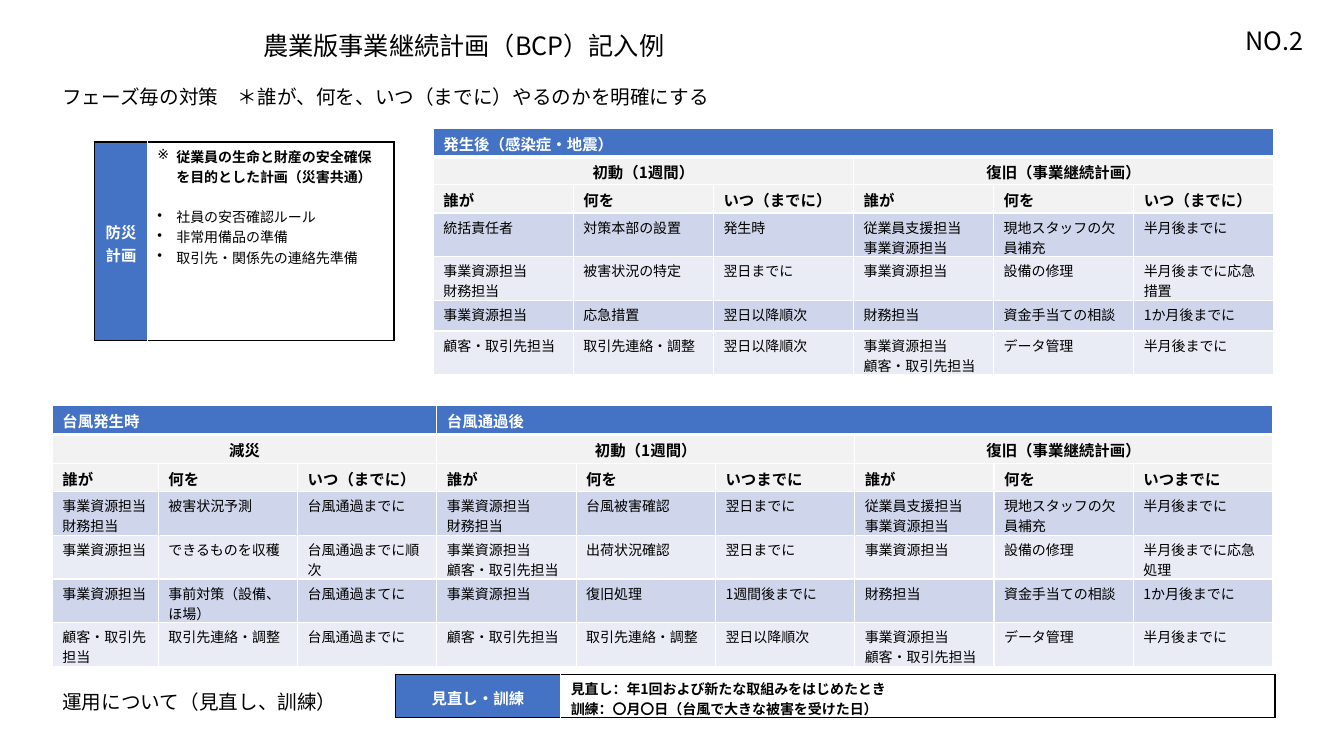
from dataclasses import dataclass

from lxml.etree import SubElement
from pptx import Presentation
from pptx.dml.color import RGBColor as Rgb
from pptx.enum.text import MSO_ANCHOR as Anchor, PP_ALIGN as Align
from pptx.oxml.ns import qn
from pptx.util import Cm, Pt


@dataclass(frozen=True)
class Theme:
    font: str = "Noto Sans CJK JP"
    black: str = "000000"
    white: str = "FFFFFF"
    blue: str = "4472C4"
    gray: str = "F2F2F2"
    bands: tuple = ("CFD5EA", "E9EBF5")
    title: int = 18
    lead: int = 14
    head: int = 11
    body: int = 10
    thin: int = 1
    thick: int = 3


T = Theme()

# Rows: cells are split by blanks, paragraphs in a cell by "/"
QUAKE = [
    "統括責任者 対策本部の設置 発生時 従業員支援担当/事業資源担当 現地スタッフの欠員補充 半月後までに",
    "事業資源担当/財務担当 被害状況の特定 翌日までに 事業資源担当 設備の修理 半月後までに応急措置",
    "事業資源担当 応急措置 翌日以降順次 財務担当 資金手当ての相談 1か月後までに",
    "顧客・取引先担当 取引先連絡・調整 翌日以降順次 事業資源担当/顧客・取引先担当 データ管理 半月後までに",
]
STORM = [
    "事業資源担当/財務担当 被害状況予測 台風通過までに 事業資源担当/財務担当 台風被害確認 翌日までに"
    " 従業員支援担当/事業資源担当 現地スタッフの欠員補充 半月後までに",
    "事業資源担当 できるものを収穫 台風通過までに順次 事業資源担当/顧客・取引先担当 出荷状況確認 翌日までに"
    " 事業資源担当 設備の修理 半月後までに応急処理",
    "事業資源担当 事前対策（設備、ほ場） 台風通過まてに 事業資源担当 復旧処理 1週間後までに"
    " 財務担当 資金手当ての相談 1か月後までに",
    "顧客・取引先担当 取引先連絡・調整 台風通過までに 顧客・取引先担当 取引先連絡・調整 翌日以降順次"
    " 事業資源担当/顧客・取引先担当 データ管理 半月後までに",
]
FIRST, REPAIR = "初動（1週間）", "復旧（事業継続計画）"


def style(para, size, color=T.black, bold=False, align=Align.LEFT):
    para.alignment = align
    font = para.font
    font.size, font.bold, font.name = Pt(size), bold, T.font
    font.color.rgb = Rgb.from_string(color)
    props = para._p.get_or_add_pPr().find(qn("a:defRPr"))
    SubElement(props, qn("a:ea"), typeface=T.font)


def write(frame, lines, *look, **more):
    for i, line in enumerate(lines):
        para = frame.paragraphs[0] if i == 0 else frame.add_paragraph()
        para.add_run().text = line
        style(para, *look, **more)


def label(slide, box, text, size, align=Align.LEFT):
    frame = slide.shapes.add_textbox(*map(Cm, box)).text_frame
    frame.word_wrap = True
    write(frame, [text], size, align=align)


def edge(cell, sides):
    """Draw cell borders; sides maps L, R, T, B to (colour, points)."""
    props = cell._tc.get_or_add_tcPr()
    for i, side in enumerate("LRTB"):
        color, width = sides[side]
        line = SubElement(props, qn(f"a:ln{side}"), w=str(Pt(width)))
        props.remove(line)
        props.insert(i, line)
        fill = SubElement(line, qn("a:solidFill"))
        SubElement(fill, qn("a:srgbClr"), val=color)


def paint(cell, color):
    cell.fill.solid()
    cell.fill.fore_color.rgb = Rgb.from_string(color)
    cell.margin_top, cell.margin_bottom = Cm(0.1), 0


def grid(slide, box, cols, rows):
    """Add a plain table with the given column widths and row heights."""
    frame = slide.shapes.add_table(len(rows), len(cols), *map(Cm, box))
    table = frame.table
    table.first_row = table.horz_banding = False
    for col, width in zip(table.columns, cols):
        col.width = Cm(width)
    for row, height in zip(table.rows, rows):
        row.height = Cm(height)
    return table


def plan(slide, box, cols, rows, tops, groups, heads, body):
    """Table of measures: title bar, phases, headings, banded rows."""
    table = grid(slide, box, cols, rows)
    thin, thick = (T.white, T.thin), (T.white, T.thick)
    fills = [T.blue, T.gray, T.gray, *T.bands, *T.bands]
    for r, fill in enumerate(fills):
        for c in range(len(cols)):
            cell = table.cell(r, c)
            paint(cell, fill)
            edge(cell, {"L": thin, "R": thin,
                        "T": thick if r == 1 else thin,
                        "B": thick if r == 0 else thin})

    # Title bar and phases
    def span(row, col, size, text, *look, **more):
        cell = table.cell(row, col)
        cell.merge(table.cell(row, col + size - 1))
        write(cell.text_frame, [text], T.head, *look, **more)

    start = 0
    for text, size in tops:
        span(0, start, size, text, T.white, True)
        start += size
    for i, text in enumerate(groups):
        span(1, i * 3, 3, text, bold=True, align=Align.CENTER)

    # Headings and measures
    for c, text in enumerate(heads.split()):
        write(table.cell(2, c).text_frame, [text], T.head, bold=True)
    for r, line in enumerate(body, 3):
        for c, text in enumerate(line.split()):
            write(table.cell(r, c).text_frame, text.split("/"), T.body)


def panel(slide, box, side, name, lines):
    """Framed box with a blue name cell on its left; returns the text."""
    table = grid(slide, box, [side, box[2] - side], [box[3]])
    dark, light = (T.black, T.thin), (T.white, T.thin)
    tag, note = table.cell(0, 0), table.cell(0, 1)
    paint(tag, T.blue)
    paint(note, T.white)
    edge(tag, {"L": dark, "R": light, "T": dark, "B": dark})
    edge(note, {"L": light, "R": dark, "T": dark, "B": dark})
    tag.vertical_anchor = Anchor.MIDDLE
    write(tag.text_frame, [name], T.head, T.white, True, Align.CENTER)
    write(note.text_frame, lines, T.body, bold=True)
    return note.text_frame


def safety(slide, box):
    """Disaster plan with its bulleted list."""
    text = panel(slide, box, 1.32, "防災計画", [
        "従業員の生命と財産の安全確保を目的とした計画（災害共通）",
        "社員の安否確認ルール", "非常用備品の準備", "取引先・関係先の連絡先準備"])
    for i, para in enumerate(text.paragraphs):
        para.font.bold = i == 0
        if i == 1:
            para.space_before = Pt(14.5)
        props = para._p.get_or_add_pPr()
        props.set("marL", str(Cm(0.48)))
        props.set("indent", str(-Cm(0.48)))
        mark = SubElement(props, qn("a:buChar"), char="•" if i else "※")
        props.find(qn("a:defRPr")).addprevious(mark)


def main():
    deck = Presentation()
    deck.slide_width, deck.slide_height = Cm(33.87), Cm(19.05)
    slide = deck.slides.add_slide(deck.slide_layouts[6])

    # Titles
    label(slide, (6.38, 0.64, 15.7, 1.02), "農業版事業継続計画（BCP）記入例", T.title)
    label(slide, (30.56, 0.51, 3.12, 1.02), "NO.2", T.title, Align.CENTER)
    label(slide, (1.32, 2.01, 17.2, 0.86),
          "フェーズ毎の対策　＊誰が、何を、いつ（までに）やるのかを明確にする", T.lead)
    label(slide, (1.32, 17.25, 11.23, 0.86), "運用について（見直し、訓練）", T.lead)

    # Tables of measures
    trio = "誰が 何を いつ（までに） "
    plan(slide, (1.32, 10.21, 30.78, 6.58), [2.67] + [3.51] * 8,
         [0.74, 0.72, 0.72] + [1.1] * 4,
         [("台風発生時", 3), ("台風通過後", 6)], ["減災", FIRST, REPAIR],
         trio + "誰が 何を いつまでに " * 2, STORM)
    plan(slide, (10.92, 3.23, 21.18, 6.21), [3.53] * 6,
         [0.72, 0.7, 0.72, 1.1, 1.1, 0.77, 1.1],
         [("発生後（感染症・地震）", 6)], [FIRST, REPAIR], trio * 2, QUAKE)

    # Framed boxes
    safety(slide, (2.39, 3.58, 7.54, 5))
    panel(slide, (9.96, 16.99, 22.17, 1.1), 4.17, "見直し・訓練",
          ["見直し：年1回および新たな取組みをはじめたとき",
           "訓練：〇月〇日（台風で大きな被害を受けた日）"])
    deck.save("out.pptx")


if __name__ == "__main__":
    main()
